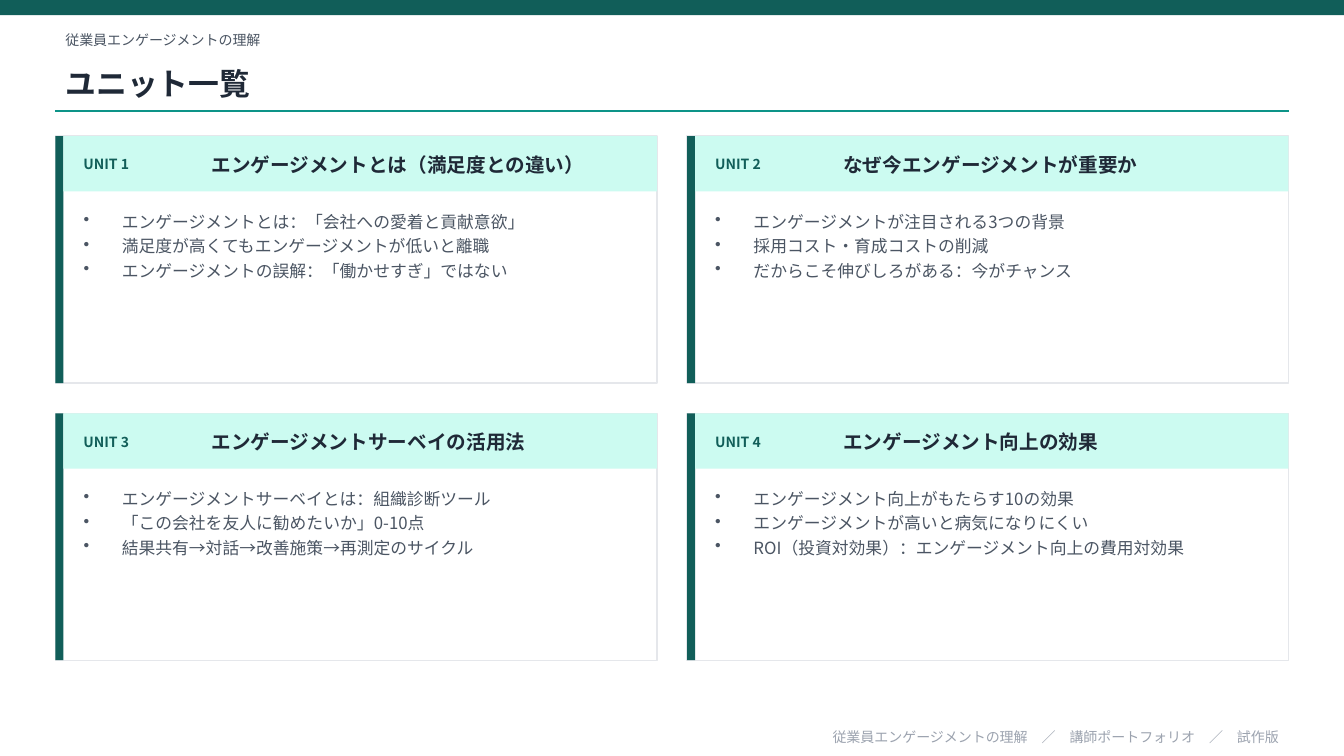
from lxml import etree
from pptx import Presentation
from pptx.dml.color import RGBColor
from pptx.enum import shapes, text
from pptx.oxml.ns import qn
from pptx.util import Inches, Pt

# Content
COURSE = "従業員エンゲージメントの理解"
TITLE = "ユニット一覧"
FOOTER = "従業員エンゲージメントの理解　／　講師ポートフォリオ　／　試作版"
UNITS = [
    ("エンゲージメントとは（満足度との違い）", [
        "エンゲージメントとは：「会社への愛着と貢献意欲」",
        "満足度が高くてもエンゲージメントが低いと離職",
        "エンゲージメントの誤解：「働かせすぎ」ではない"]),
    ("なぜ今エンゲージメントが重要か", [
        "エンゲージメントが注目される3つの背景",
        "採用コスト・育成コストの削減",
        "だからこそ伸びしろがある：今がチャンス"]),
    ("エンゲージメントサーベイの活用法", [
        "エンゲージメントサーベイとは：組織診断ツール",
        "「この会社を友人に勧めたいか」0-10点",
        "結果共有→対話→改善施策→再測定のサイクル"]),
    ("エンゲージメント向上の効果", [
        "エンゲージメント向上がもたらす10の効果",
        "エンゲージメントが高いと病気になりにくい",
        "ROI（投資対効果）：エンゲージメント向上の費用対効果"]),
]


class Theme:
    font = "Noto Sans CJK JP"
    dark, teal, mint = "115E59", "0D9488", "CCFBF1"
    ink, body, mute = "1F2937", "4B5563", "9CA3AF"
    white, edge = "FFFFFF", "E5E7EB"
    title, head, item, small = 22, 14, 12, 10


# Layout, in inches
WIDE, HIGH = 13.33, 7.5
LEFT, SPAN = 0.55, 12.23
TOP, GAP = 1.35, 0.3
CARD_W, CARD_H = (SPAN - GAP) / 2, 2.45
BAR, BAND, PAD = 0.08, 0.55, 0.1
INDENT = 0.38

deck = Presentation()
deck.slide_width, deck.slide_height = Inches(WIDE), Inches(HIGH)
slide = deck.slides.add_slide(deck.slide_layouts[5])


def rgb(code):
    return RGBColor.from_string(code)


def rect(x, y, w, h, fill, line=None):
    box = slide.shapes.add_shape(shapes.MSO_SHAPE.RECTANGLE,
                                 *map(Inches, (x, y, w, h)))
    box.shadow.inherit = False
    box.fill.solid()
    box.fill.fore_color.rgb = rgb(fill)
    if line:
        box.line.color.rgb = rgb(line)
        box.line.width = Pt(1)
    else:
        box.line.fill.background()


def bullet(para):
    props = para._p.get_or_add_pPr()
    props.set("marL", str(Inches(INDENT)))
    props.set("indent", str(-Inches(INDENT)))
    para.space_after = Pt(3)
    etree.SubElement(props, qn("a:buChar"), char="•")


def write(x, y, w, h, lines, size, color, bold=False, box=None,
          align=text.PP_ALIGN.LEFT, bullets=False):
    box = box or slide.shapes.add_textbox(0, 0, 0, 0)
    box.left, box.top, box.width, box.height = map(Inches, (x, y, w, h))
    frame = box.text_frame
    frame.text = "\n".join(lines)
    frame.word_wrap = True
    frame.auto_size = text.MSO_AUTO_SIZE.NONE
    frame.vertical_anchor = (text.MSO_ANCHOR.TOP if bullets
                             else text.MSO_ANCHOR.MIDDLE)
    for para in frame.paragraphs:
        para.alignment = align
        if bullets:
            bullet(para)
        font = para.font
        font.name, font.size, font.bold = Theme.font, Pt(size), bold
        font.color.rgb = rgb(color)
        # Japanese glyphs take the East Asian typeface
        run = para._p.pPr.find(qn("a:defRPr"))
        etree.SubElement(run, qn("a:ea"), typeface=Theme.font)


def card(x, y, label, head, items):
    inner = x + BAR
    rect(x, y, CARD_W, CARD_H, Theme.white, Theme.edge)
    rect(x, y, BAR, CARD_H, Theme.dark)
    rect(inner, y, CARD_W - BAR, BAND, Theme.mint)
    write(inner + PAD, y + 0.08, 1.2, 0.4, [label],
          Theme.small, Theme.dark, bold=True)
    write(x + 1.45, y + 0.08, 4.37, 0.4, [head],
          Theme.head, Theme.ink, bold=True)
    write(inner + PAD, y + 0.7, 5.61, 1.6, items,
          Theme.item, Theme.body, bullets=True)


# Header
rect(0, 0, WIDE, 0.15, Theme.dark)
write(LEFT, 0.25, SPAN, 0.3, [COURSE], Theme.small, Theme.body)
write(LEFT, 0.55, SPAN, 0.55, [TITLE], Theme.title, Theme.ink,
      bold=True, box=slide.shapes.title)
rule = slide.shapes.add_connector(
    shapes.MSO_CONNECTOR.STRAIGHT,
    *map(Inches, (LEFT, 1.1, LEFT + SPAN, 1.1)))
rule.line.color.rgb = rgb(Theme.teal)
rule.line.width = Pt(1)
etree.SubElement(rule._element.spPr, qn("a:effectLst"))

# Unit cards, two by two
for i, (head, items) in enumerate(UNITS):
    row, col = divmod(i, 2)
    card(LEFT + col * (CARD_W + GAP), TOP + row * (CARD_H + GAP),
         f"UNIT {i + 1}", head, items)

# Footer
write(LEFT, 7.2, SPAN, 0.22, [FOOTER], Theme.small, Theme.mute,
      align=text.PP_ALIGN.RIGHT)

deck.save("out.pptx")
